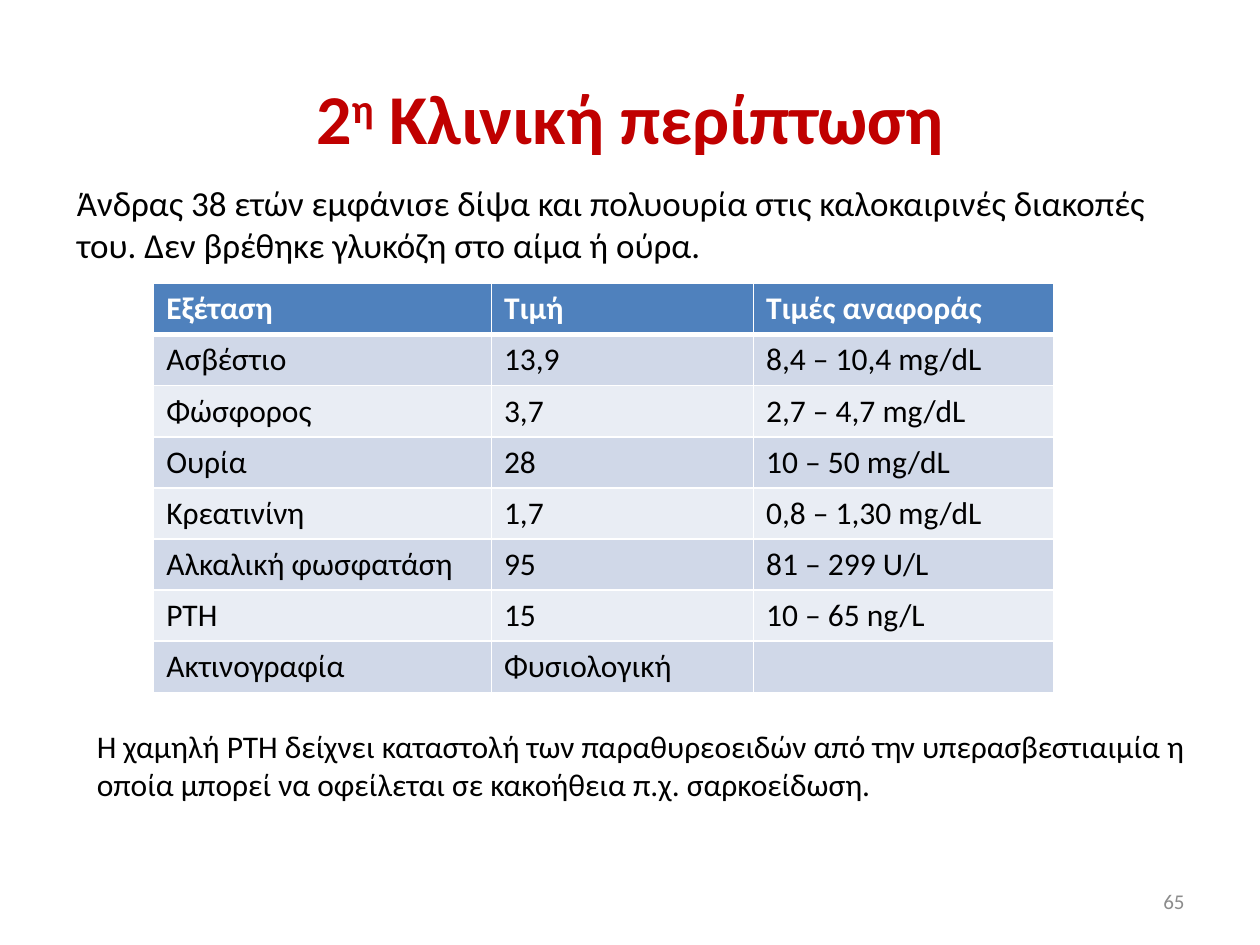
"""Build the second clinical case slide."""
import lxml.etree
import pptx
import pptx.dml.color
import pptx.enum.text
import pptx.oxml.ns
import pptx.util

Inches = pptx.util.Inches
ALIGN = pptx.enum.text.PP_ALIGN
ANCHOR = pptx.enum.text.MSO_ANCHOR
FONT = "Calibri"
BLACK, WHITE, RED, GREY = "000000", "FFFFFF", "C00000", "8C8C8C"
HEADER, BANDS = "4F81BD", ("D0D8E8", "E9EDF4")
COLUMNS = (2.68, 2.08, 2.38)
ROW_HEIGHT = 0.405
TESTS = (
    ("Εξέταση", "Τιμή", "Τιμές αναφοράς"),
    ("Ασβέστιο", "13,9", "8,4 – 10,4 mg/dL"),
    ("Φώσφορος", "3,7", "2,7 – 4,7 mg/dL"),
    ("Ουρία", "28", "10 – 50 mg/dL"),
    ("Κρεατινίνη", "1,7", "0,8 – 1,30 mg/dL"),
    ("Αλκαλική φωσφατάση", "95", "81 – 299 U/L"),
    ("PTH", "15", "10 – 65 ng/L"),
    ("Ακτινογραφία", "Φυσιολογική", ""),
)


def rgb(value):
    """Turn a hex string into a colour."""
    return pptx.dml.color.RGBColor.from_string(value)


def add_run(p, text, size, color=BLACK, bold=False):
    """Append a formatted run to a paragraph."""
    r = p.add_run()
    r.text = text
    r.font.name = FONT
    r.font.size = pptx.util.Pt(size)
    r.font.bold = bold
    r.font.color.rgb = rgb(color)
    return r


def place(sp, left, top, width, height):
    """Move and size a shape, in inches."""
    sp.left, sp.top = Inches(left), Inches(top)
    sp.width, sp.height = Inches(width), Inches(height)


def fill_title(sp):
    """Write the title with its raised ordinal ending."""
    place(sp, 0.5, 0.3, 9, 1.25)
    tf = sp.text_frame
    tf.vertical_anchor = ANCHOR.MIDDLE
    p = tf.paragraphs[0]
    p.alignment = ALIGN.CENTER
    for text, baseline in (("2", 0), ("η", 30000), (" Κλινική περίπτωση", 0)):
        r = add_run(p, text, 40, RED, True)
        if baseline:
            r.font._element.set("baseline", str(baseline))


def fill_body(sp, text):
    """Write the case history without a bullet."""
    place(sp, 0.51, 1.39, 9, 4.95)
    p = sp.text_frame.paragraphs[0]
    pPr = p._p.get_or_add_pPr()
    pPr.set("marL", "0")
    pPr.set("indent", "0")
    lxml.etree.SubElement(pPr, pptx.oxml.ns.qn("a:buNone"))
    add_run(p, text, 20)


def add_text(s, box, text, size, color=BLACK, align=ALIGN.LEFT, anchor=ANCHOR.TOP):
    """Add a wrapping text box."""
    tf = s.shapes.add_textbox(*map(Inches, box)).text_frame
    tf.word_wrap = True
    tf.vertical_anchor = anchor
    p = tf.paragraphs[0]
    p.alignment = align
    add_run(p, text, size, color)


def set_borders(cell, top, bottom):
    """Give a cell white borders, widths in points."""
    tcPr = cell._tc.get_or_add_tcPr()
    for side, width in (("L", 1), ("R", 1), ("T", top), ("B", bottom)):
        ln = lxml.etree.SubElement(tcPr, pptx.oxml.ns.qn("a:ln" + side))
        ln.set("w", str(pptx.util.Pt(width)))
        fill = lxml.etree.SubElement(ln, pptx.oxml.ns.qn("a:solidFill"))
        lxml.etree.SubElement(fill, pptx.oxml.ns.qn("a:srgbClr")).set("val", WHITE)


def add_results(s, left, top):
    """Add the table of laboratory results."""
    table = s.shapes.add_table(
        len(TESTS), len(COLUMNS), Inches(left), Inches(top),
        Inches(sum(COLUMNS)), Inches(ROW_HEIGHT * len(TESTS))).table
    for column, width in zip(table.columns, COLUMNS):
        column.width = Inches(width)
    for i, values in enumerate(TESTS):
        header = i == 0
        for j, text in enumerate(values):
            cell = table.cell(i, j)
            set_borders(cell, 3 if i == 1 else 1, 3 if header else 1)
            cell.fill.solid()
            cell.fill.fore_color.rgb = rgb(HEADER if header else BANDS[(i - 1) % 2])
            if text:
                add_run(cell.text_frame.paragraphs[0], text, 18,
                        WHITE if header else BLACK, header)


def main():
    """Build and save the slide."""
    prs = pptx.Presentation()
    prs.slide_width, prs.slide_height = Inches(10), Inches(7.5)
    s = prs.slides.add_slide(prs.slide_layouts[1])
    fill_title(s.shapes.title)
    fill_body(s.placeholders[1],
              "Άνδρας 38 ετών εμφάνισε δίψα και πολυουρία στις καλοκαιρινές "
              "διακοπές του. Δεν βρέθηκε γλυκόζη στο αίμα ή ούρα.")
    add_results(s, 1.22, 2.25)
    add_text(s, (0.67, 5.72, 8.9, 0.71),
             "H χαμηλή PTH δείχνει καταστολή των παραθυρεοειδών από την "
             "υπερασβεστιαιμία η οποία μπορεί να οφείλεται σε κακοήθεια π.χ. "
             "σαρκοείδωση.", 18)
    add_text(s, (7.17, 6.95, 2.33, 0.4), "65", 12, GREY, ALIGN.RIGHT, ANCHOR.MIDDLE)
    prs.save("out.pptx")


if __name__ == "__main__":
    main()
